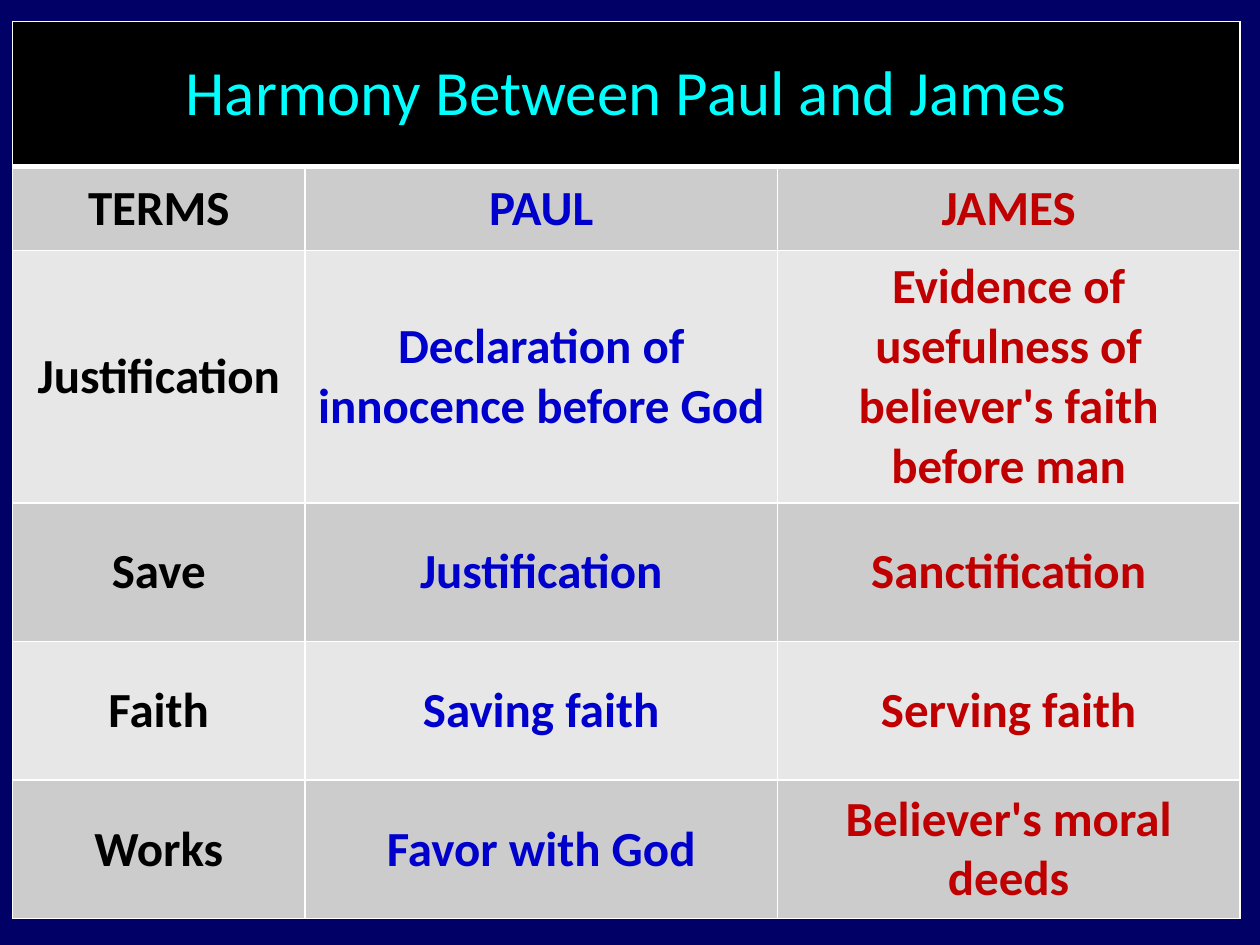
from typing import NamedTuple

from lxml.etree import SubElement
from pptx import Presentation
from pptx.dml.color import RGBColor as RGB
from pptx.enum.text import MSO_ANCHOR as Anchor, PP_ALIGN as Align
from pptx.oxml.ns import qn
from pptx.table import _Cell as Cell
from pptx.util import Inches, Pt

COLORS = {
    "background": "000066",
    "title_fill": "000000",
    "title": "00FFFF",
    "border": "FFFFFF",
    "dark_band": "CCCCCC",
    "light_band": "E7E7E7",
    "term": "000000",
    "paul": "0000CC",
    "james": "C00000",
}


class Comparison(NamedTuple):
    term: str
    paul: str
    james: str
    height: float = 1.1


TITLE = "Harmony Between Paul and James"
TITLE_HEIGHT = 1.15
COL_WIDTHS = Comparison._fields[:3], (2.32, 3.75, 3.67)
COMPARISONS = [
    Comparison("TERMS", "PAUL", "JAMES", 0.67),
    Comparison("Justification", "Declaration of innocence before God",
               "Evidence of usefulness of believer's faith before man", 2),
    Comparison("Save", "Justification", "Sanctification"),
    Comparison("Faith", "Saving faith", "Serving faith"),
    Comparison("Works", "Favor with God", "Believer's moral deeds"),
]


def color(name: str) -> RGB:
    return RGB.from_string(COLORS[name])


def set_borders(cell: Cell, top: float = 1, bottom: float = 1) -> None:
    tc_pr = cell._tc.get_or_add_tcPr()
    for side, width in (("L", 1), ("R", 1), ("T", top), ("B", bottom)):
        ln = SubElement(tc_pr, qn(f"a:ln{side}"), w=str(Pt(width)))
        fill = SubElement(ln, qn("a:solidFill"))
        SubElement(fill, qn("a:srgbClr"), val=COLORS["border"])


def fill_cell(cell: Cell, fill: str) -> None:
    cell.fill.solid()
    cell.fill.fore_color.rgb = color(fill)


def write_cell(cell: Cell, text: str, text_color: str, size: int, bold: bool) -> None:
    cell.vertical_anchor = Anchor.MIDDLE
    cell.text_frame.text = text
    p = cell.text_frame.paragraphs[0]
    p.alignment = Align.CENTER
    font = p.runs[0].font
    font.name, font.size, font.bold = "Calibri", Pt(size), bold
    font.color.rgb = color(text_color)


def main() -> None:
    """Build the slide comparing the terms of Paul and James."""
    prs = Presentation()
    prs.slide_width, prs.slide_height = Inches(10), Inches(7.5)
    s = prs.slides.add_slide(prs.slide_layouts[6])
    s.background.fill.solid()
    s.background.fill.fore_color.rgb = color("background")

    columns, widths = COL_WIDTHS
    heights = [TITLE_HEIGHT] + [c.height for c in COMPARISONS]
    table = s.shapes.add_table(
        len(heights), len(columns), Inches(0.1), Inches(0.17),
        Inches(sum(widths)), Inches(sum(heights))).table
    for col, width in zip(table.columns, widths):
        col.width = Inches(width)
    for row, height in zip(table.rows, heights):
        row.height = Inches(height)

    for i in range(len(columns)):
        set_borders(table.cell(0, i), bottom=3)
        fill_cell(table.cell(0, i), "title_fill")
    table.cell(0, 0).merge(table.cell(0, len(columns) - 1))
    write_cell(table.cell(0, 0), TITLE, "title", 36, False)

    for r, comparison in enumerate(COMPARISONS, 1):
        for c, name in enumerate(columns):
            cell = table.cell(r, c)
            set_borders(cell, top=3 if r == 1 else 1)
            fill_cell(cell, "dark_band" if r % 2 else "light_band")
            write_cell(cell, comparison[c], name, 28, True)

    prs.save("out.pptx")


if __name__ == "__main__":
    main()
